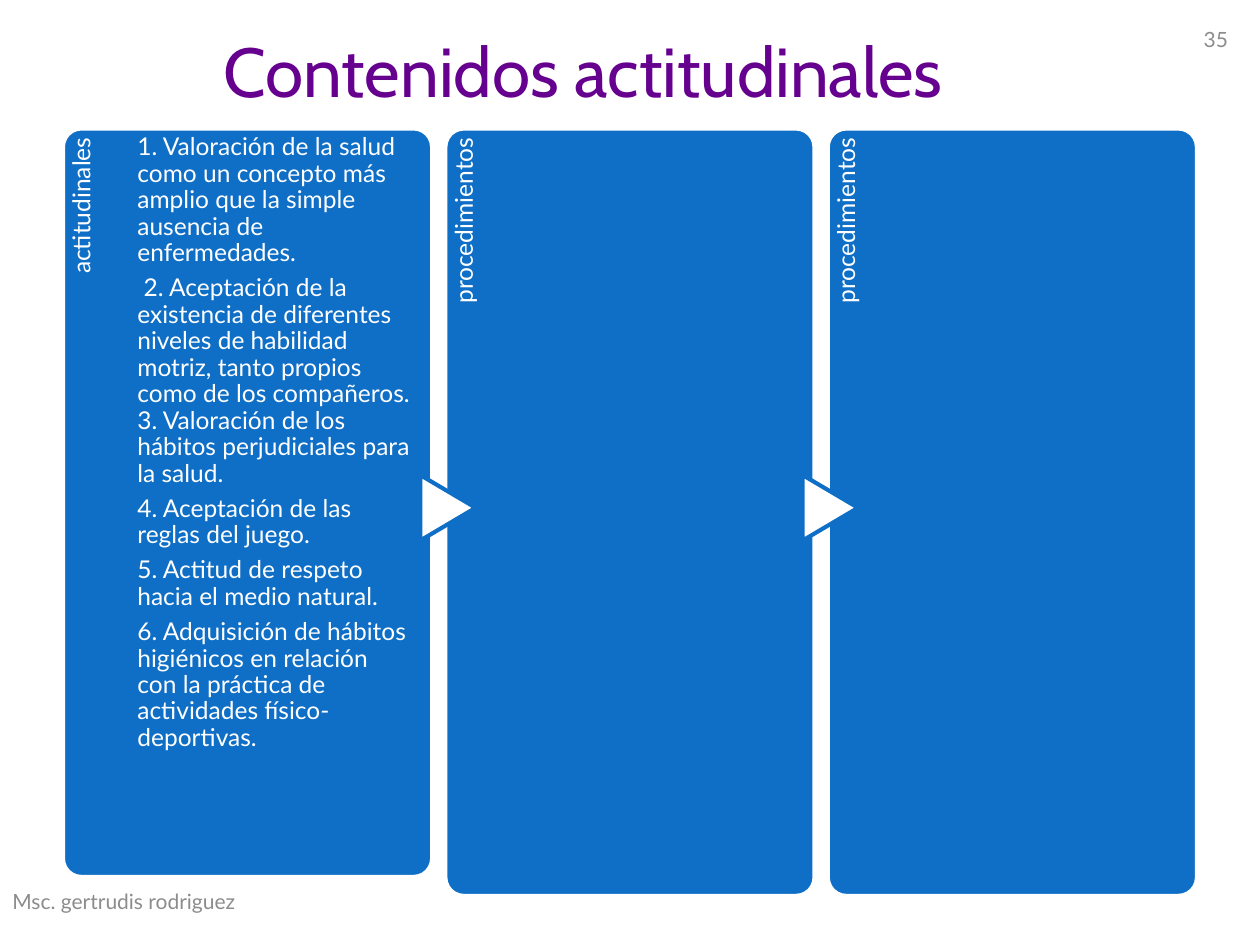
from pptx import Presentation
from pptx.dml.color import RGBColor
from pptx.enum import shapes, text
from pptx.util import Inches, Pt

COLORS = {"title": "66008F", "card": "0F6FC6", "white": "FFFFFF", "muted": "8C8C8C"}
KIND = shapes.MSO_SHAPE
ALIGN = text.PP_ALIGN
ANCHOR = text.MSO_ANCHOR

CARD_LEFT, CARD_TOP, CARD_WIDTH, CARD_PITCH = 0.5, 1.02, 2.93, 3.035
STRIP_WIDTH = 0.59
ARROW_WIDTH, ARROW_HEIGHT, ARROW_MIDDLE = 0.52, 0.44, 4.03

CONTENTS = [
    "1. Valoración de la salud como un concepto más amplio que la simple ausencia de enfermedades.",
    " 2. Aceptación de la existencia de diferentes niveles de habilidad motriz, tanto propios "
    "como de los compañeros. 3. Valoración de los hábitos perjudiciales para la salud.",
    "4. Aceptación de las reglas del juego.",
    "5. Actitud de respeto hacia el medio natural.",
    "6. Adquisición de hábitos higiénicos en relación con la práctica de actividades físico-deportivas.",
]
CARDS = [("actitudinales", 5.94, CONTENTS), ("procedimientos", 6.09, []), ("procedimientos", 6.09, [])]


class SlideBuilder:
    """Holds the slide and its style."""

    font = "Lato"
    line_width = 2.36

    def __init__(self, slide):
        self.slide = slide

    def fill_text(self, frame, lines, size, color, align=ALIGN.LEFT, anchor=ANCHOR.TOP,
                  font=None, insets=None, spacing=None, after=0):
        frame.word_wrap = True
        frame.auto_size = text.MSO_AUTO_SIZE.NONE
        frame.vertical_anchor = anchor
        if insets:
            (frame.margin_left, frame.margin_top,
             frame.margin_right, frame.margin_bottom) = map(Inches, insets)
        frame.text = "\n".join(lines)
        for paragraph in frame.paragraphs:
            paragraph.alignment = align
            paragraph.line_spacing = spacing
            paragraph.space_after = Pt(after)
            paragraph.font.size = Pt(size)
            paragraph.font.name = font or self.font
            paragraph.font.color.rgb = RGBColor.from_string(COLORS[color])

    def title(self, box, words):
        title = self.slide.shapes.title
        title.left, title.top, title.width, title.height = map(Inches, box)
        self.fill_text(title.text_frame, [words], 39.6, "title", ALIGN.CENTER, ANCHOR.MIDDLE, "Cabin")

    def textbox(self, box, lines, size, color, rotation=0, **style):
        textbox = self.slide.shapes.add_textbox(*map(Inches, box))
        textbox.rotation = rotation
        self.fill_text(textbox.text_frame, lines, size, color, **style)

    def shape(self, kind, box, fill=None, line=None, rotation=0, rounding=None):
        shape = self.slide.shapes.add_shape(kind, *map(Inches, box))
        shape.shadow.inherit = False
        shape.rotation = rotation
        if rounding is not None:
            shape.adjustments[0] = rounding
        if fill:
            shape.fill.solid()
            shape.fill.fore_color.rgb = RGBColor.from_string(COLORS[fill])
        else:
            shape.fill.background()
        if line:
            shape.line.color.rgb = RGBColor.from_string(COLORS[line])
            shape.line.width = Pt(self.line_width)
        else:
            shape.line.fill.background()
        return shape

    def card(self, left, height, label, lines):
        self.shape(KIND.ROUNDED_RECTANGLE, (left, CARD_TOP, CARD_WIDTH, height),
                   "card", "white", rounding=0.05)
        # The label reads upwards along the left strip
        length = height * 0.82
        label_box = (left + (STRIP_WIDTH - length) / 2,
                     CARD_TOP + (length - STRIP_WIDTH) / 2, length, STRIP_WIDTH)
        self.textbox(label_box, [label], 14, "white", rotation=270, align=ALIGN.RIGHT,
                     insets=(0, 0.05, 0.07, 0), spacing=0.9, after=4.9)
        if lines:
            self.textbox((left + STRIP_WIDTH, CARD_TOP, 2.18, height), lines, 14, "white",
                         insets=(0, 0.05, 0, 0), spacing=0.9, after=4.9)

    def arrow(self, middle):
        box = (middle - ARROW_WIDTH / 2, ARROW_MIDDLE - ARROW_HEIGHT / 2, ARROW_WIDTH, ARROW_HEIGHT)
        self.shape(KIND.FLOWCHART_EXTRACT, box, "white", "card", rotation=90)


def main():
    presentation = Presentation()
    presentation.slide_width, presentation.slide_height = Inches(10), Inches(7.5)
    builder = SlideBuilder(presentation.slides.add_slide(presentation.slide_layouts[5]))

    # Title
    builder.title((0.47, 0.23, 8.44, 0.64), "Contenidos actitudinales ")

    # Cards, with an arrow leading into each one after the first
    for index, (label, height, lines) in enumerate(CARDS):
        left = CARD_LEFT + index * CARD_PITCH
        builder.card(left, height, label, lines)
        if index:
            builder.arrow(left + 0.02)

    # Footer and page number
    builder.textbox((0, 6.95, 3.17, 0.4), ["Msc. gertrudis rodriguez"], 12, "muted",
                    anchor=ANCHOR.MIDDLE)
    number = builder.shape(KIND.ROUNDED_RECTANGLE, (9.3, 0, 0.7, 0.62))
    builder.fill_text(number.text_frame, ["35"], 12, "muted", ALIGN.CENTER, ANCHOR.MIDDLE)

    presentation.save("out.pptx")


if __name__ == "__main__":
    main()
